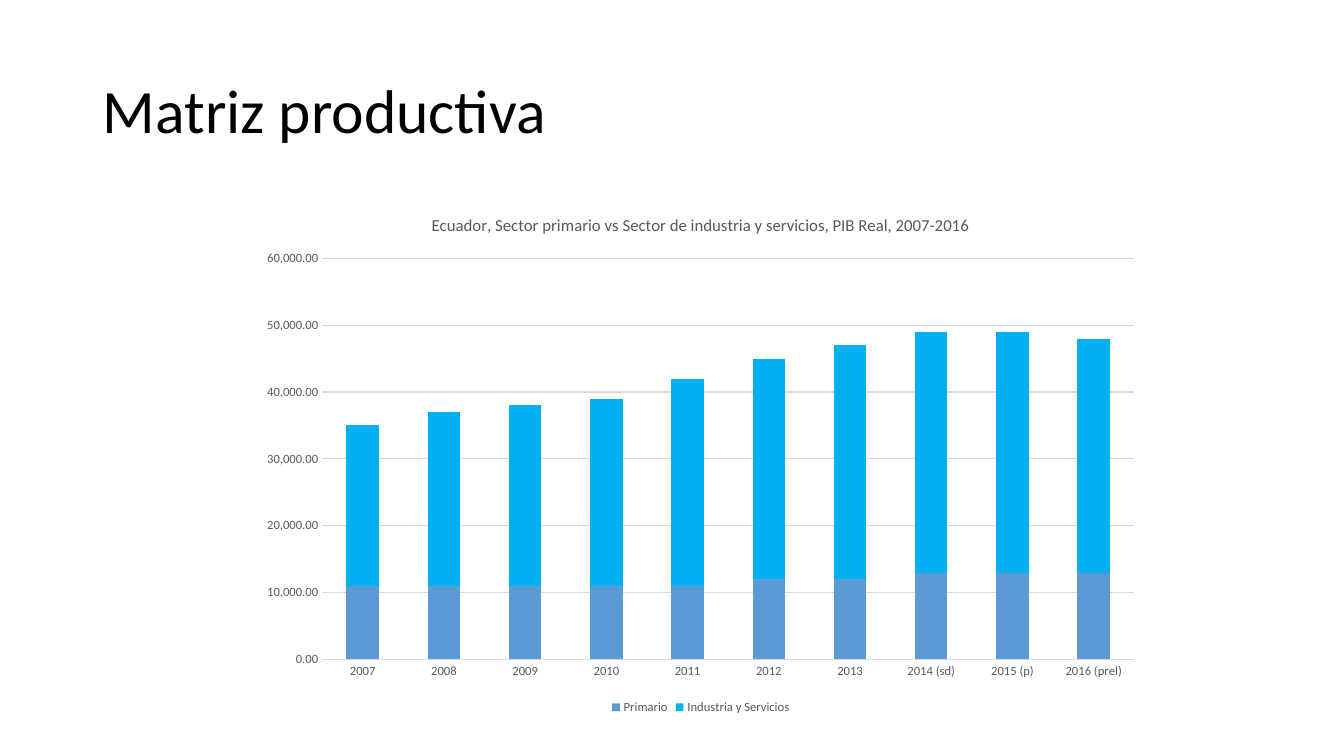
from pptx import Presentation
from pptx.chart.data import CategoryChartData
from pptx.dml.color import RGBColor
from pptx.enum import chart as ch, text
from pptx.util import Inches, Pt

FONT = "Calibri"
BLACK = RGBColor(0x00, 0x00, 0x00)
GRAY = RGBColor(0x59, 0x59, 0x59)
RULE = RGBColor(0xD9, 0xD9, 0xD9)
PRIMARY_BLUE = RGBColor(0x5B, 0x9B, 0xD5)
INDUSTRY_BLUE = RGBColor(0x00, 0xB0, 0xF0)

YEARS = ["2007", "2008", "2009", "2010", "2011", "2012", "2013",
         "2014 (sd)", "2015 (p)", "2016 (prel)"]
SECTORS = [
    ("Primario", PRIMARY_BLUE,
     [11000, 11000, 11000, 11000, 11000, 12000, 12000, 13000, 13000, 13000]),
    ("Industria y Servicios", INDUSTRY_BLUE,
     [24000, 26000, 27000, 28000, 31000, 33000, 35000, 36000, 36000, 35000]),
]


def style_font(font, size, color):
    """Apply the slide's typeface with a size and colour."""
    font.name = FONT
    font.size = Pt(size)
    font.bold = False
    font.color.rgb = color


def style_rule(line):
    """Draw a thin light gray line."""
    line.color.rgb = RULE
    line.width = Pt(0.75)


def set_heading(heading, wording):
    """Place and format the slide title."""
    heading.left, heading.top = Inches(0.92), Inches(0.4)
    heading.width, heading.height = Inches(11.5), Inches(1.45)
    frame = heading.text_frame
    frame.text = wording
    frame.word_wrap = True
    frame.vertical_anchor = text.MSO_ANCHOR.MIDDLE
    paragraph = frame.paragraphs[0]
    paragraph.alignment = text.PP_ALIGN.LEFT
    paragraph.line_spacing = 0.9
    style_font(paragraph.font, 44, BLACK)


def style_axes(chart):
    """Format the year axis, the value axis and its gridlines."""
    years, values = chart.category_axis, chart.value_axis
    for axis in (years, values):
        axis.major_tick_mark = ch.XL_TICK_MARK.NONE
        axis.minor_tick_mark = ch.XL_TICK_MARK.NONE
        style_font(axis.tick_labels.font, 9, GRAY)
    style_rule(years.format.line)
    values.format.line.fill.background()
    values.has_major_gridlines = True
    style_rule(values.major_gridlines.format.line)
    values.minimum_scale, values.maximum_scale = 0, 60000
    values.major_unit = 10000
    values.tick_labels.number_format = "#,##0.00"
    values.tick_labels.number_format_is_linked = False


def add_sector_chart(slide):
    """Add the stacked columns that compare both sectors."""
    sector_data = CategoryChartData(number_format="#,##0.00")
    sector_data.categories = YEARS
    for name, _, amounts in SECTORS:
        sector_data.add_series(name, amounts)
    chart = slide.shapes.add_chart(
        ch.XL_CHART_TYPE.COLUMN_STACKED, Inches(2.47), Inches(1.93),
        Inches(8.96), Inches(5.2), sector_data).chart
    style_font(chart.font, 10, BLACK)

    chart.has_title = True
    caption = chart.chart_title.text_frame
    caption.text = ("Ecuador, Sector primario vs Sector de industria y "
                    "servicios, PIB Real, 2007-2016")
    style_font(caption.paragraphs[0].font, 12, GRAY)
    chart.chart_title.include_in_layout = False

    chart.has_legend = True
    chart.legend.position = ch.XL_LEGEND_POSITION.BOTTOM
    chart.legend.include_in_layout = False
    style_font(chart.legend.font, 9, GRAY)

    style_axes(chart)
    columns = chart.plots[0]
    columns.gap_width, columns.overlap = 150, 100
    columns.vary_by_categories = False
    for series, (_, color, _) in zip(columns.series, SECTORS):
        series.format.fill.solid()
        series.format.fill.fore_color.rgb = color


def main():
    """Build and save the slide."""
    deck = Presentation()
    deck.slide_width, deck.slide_height = Inches(13.33), Inches(7.5)
    slide = deck.slides.add_slide(deck.slide_layouts[5])
    set_heading(slide.shapes.title, "Matriz productiva")
    add_sector_chart(slide)
    deck.save("out.pptx")


if __name__ == "__main__":
    main()
